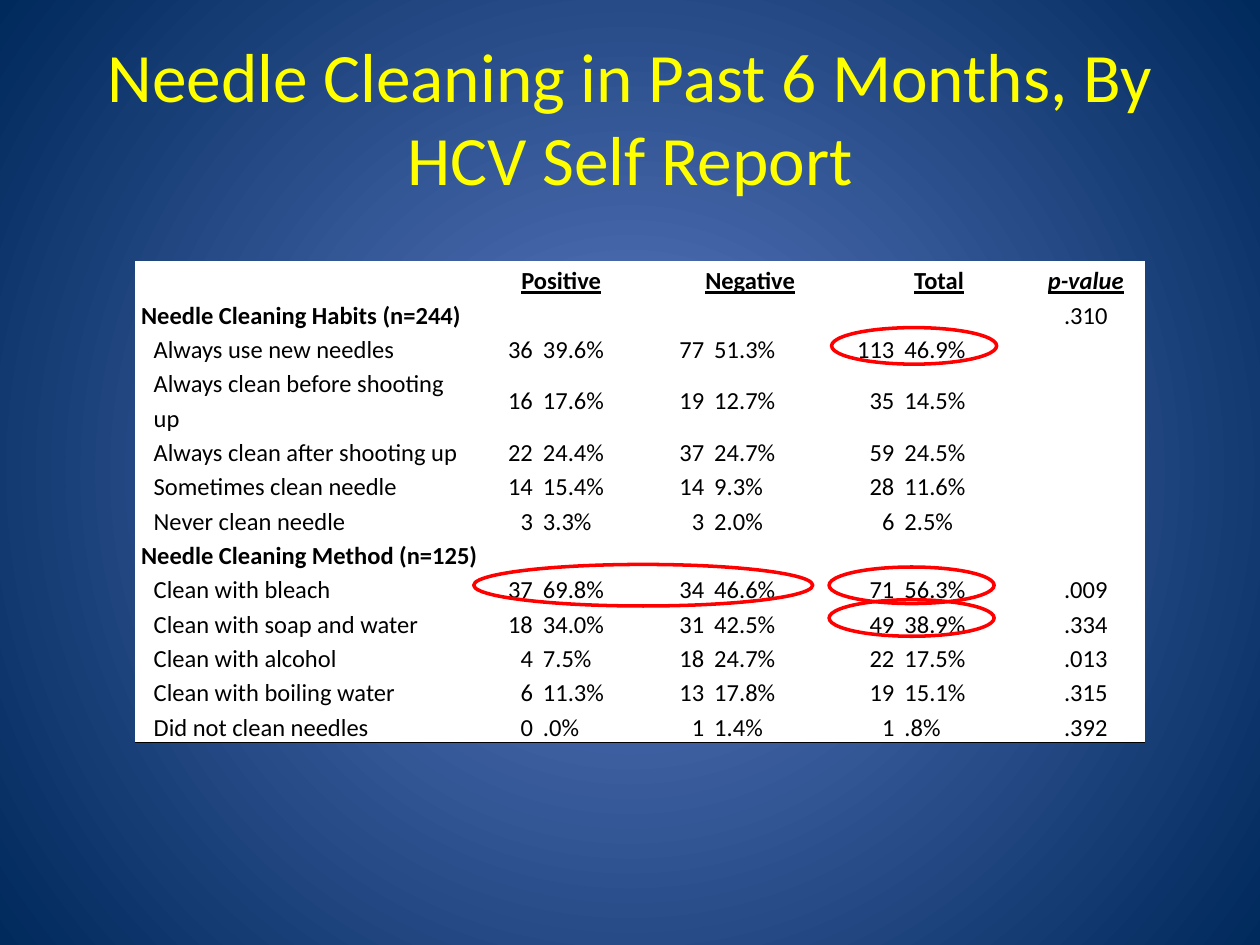
import lxml.etree
import pptx
import pptx.dml.color
import pptx.enum.shapes
import pptx.enum.text
import pptx.oxml.ns
import pptx.util

COLORS = {"title": "FFFF00", "text": "000000", "cell": "FFFFFF", "ring": "FF0000",
          "center": "5E7CC5", "edge": "00295C"}
FONT = "Calibri"
# The slide is a grid of 100 columns by 75 rows.
UNIT = pptx.util.Inches(0.1)
COLUMNS = (26.7, 5.2, 8.9, 4.7, 11.2, 3.9, 10.2, 9.2)
ROW = 2.7
TWO_LINE_ROW = 3
ALIGN = pptx.enum.text.PP_ALIGN
ANCHOR = pptx.enum.text.MSO_ANCHOR
qn = pptx.oxml.ns.qn

GROUPS = ("Positive", "Negative", "Total")
HABITS = "Needle Cleaning Habits (n=244)"
METHOD = "Needle Cleaning Method (n=125)"
ROWS = (
    (HABITS, "", "", "", "", "", "", ".310"),
    ("Always use new needles", "36", "39.6%", "77", "51.3%", "113", "46.9%", ""),
    ("Always clean before shooting up", "16", "17.6%", "19", "12.7%", "35", "14.5%", ""),
    ("Always clean after shooting up", "22", "24.4%", "37", "24.7%", "59", "24.5%", ""),
    ("Sometimes clean needle", "14", "15.4%", "14", "9.3%", "28", "11.6%", ""),
    ("Never clean needle", "3", "3.3%", "3", "2.0%", "6", "2.5%", ""),
    (METHOD, "", "", "", "", "", "", ""),
    ("Clean with bleach", "37", "69.8%", "34", "46.6%", "71", "56.3%", ".009"),
    ("Clean with soap and water", "18", "34.0%", "31", "42.5%", "49", "38.9%", ".334"),
    ("Clean with alcohol", "4", "7.5%", "18", "24.7%", "22", "17.5%", ".013"),
    ("Clean with boiling water", "6", "11.3%", "13", "17.8%", "19", "15.1%", ".315"),
    ("Did not clean needles", "0", ".0%", "1", "1.4%", "1", ".8%", ".392"),
)
RINGS = ((66, 26, 13.1, 2.9), (37.6, 44.8, 26.9, 3.3),
         (65.8, 45, 13.1, 2.9), (65.8, 47.6, 13.1, 2.9))


def rgb(name):
    return pptx.dml.color.RGBColor.from_string(COLORS[name])


def grid(*lengths):
    return [int(n * UNIT) for n in lengths]


def set_all(obj, values):
    for name, value in values.items():
        setattr(obj, name, value)


def add_run(p, text, size, color, **style):
    r = p.add_run()
    r.text = text
    set_all(r.font, dict(name=FONT, size=pptx.util.Pt(size), **style))
    r.font.color.rgb = rgb(color)


def set_background(s):
    """Radial gradient from the middle of the slide."""
    fill = s.background.fill
    fill.gradient()
    for stop, name in zip(fill.gradient_stops, ("center", "edge")):
        stop.color.rgb = rgb(name)
    grad = s.element.find(".//" + qn("a:gradFill"))
    lin = grad.find(qn("a:lin"))
    path = lxml.etree.Element(qn("a:path"), path="circle")
    lxml.etree.SubElement(path, qn("a:fillToRect"),
                          {side: "50000" for side in "ltrb"})
    grad.replace(lin, path)


def set_title(s, text):
    sp = s.shapes.title
    set_all(sp, dict(zip(("left", "top", "width", "height"), grid(5, 3, 90, 12.5))))
    tf = sp.text_frame
    set_all(tf, {"word_wrap": True, "vertical_anchor": ANCHOR.MIDDLE,
                 "auto_size": pptx.enum.text.MSO_AUTO_SIZE.NONE})
    p = tf.paragraphs[0]
    p.alignment = ALIGN.CENTER
    add_run(p, text, 39.6, "title")


def fill_cell(cell, text, align, anchor, indent=False, **style):
    left, right = grid(1.4, 0.5) if indent else grid(0.4, 0.4)
    set_all(cell, {"margin_left": left, "margin_right": right, "margin_top": 0,
                   "margin_bottom": 0, "vertical_anchor": anchor})
    cell.fill.solid()
    cell.fill.fore_color.rgb = rgb("cell")
    p = cell.text_frame.paragraphs[0]
    set_all(p, {"alignment": align, "line_spacing": 1.15})
    if text:
        add_run(p, text, 14, "text", **style)
    else:
        lxml.etree.SubElement(p._p, qn("a:endParaRPr"), sz="1000")


def add_bottom_border(cell):
    ln = lxml.etree.Element(qn("a:lnB"), w=str(pptx.util.Pt(1)))
    fill = lxml.etree.SubElement(ln, qn("a:solidFill"))
    lxml.etree.SubElement(fill, qn("a:srgbClr"), val=COLORS["text"])
    cell._tc.get_or_add_tcPr().insert(0, ln)


def fill_header(table):
    texts = [""] * len(COLUMNS)
    texts[1:7:2] = GROUPS
    texts[-1] = "p-value"
    for c, text in enumerate(texts):
        fill_cell(table.cell(0, c), text, ALIGN.CENTER, ANCHOR.BOTTOM, bold=True,
                  underline=True, italic=text == "p-value")
    for c in (1, 3, 5):
        table.cell(0, c).merge(table.cell(0, c + 1))


def fill_row(table, i, values):
    label, *numbers, p_value = values
    heading = label in (HABITS, METHOD)
    fill_cell(table.cell(i, 0), label, ALIGN.LEFT, ANCHOR.BOTTOM,
              indent=not heading, bold=heading)
    for c, text in enumerate(numbers, 1):
        align = ALIGN.RIGHT if c % 2 else ALIGN.LEFT
        fill_cell(table.cell(i, c), text, align, ANCHOR.MIDDLE)
    fill_cell(table.cell(i, 7), p_value, ALIGN.CENTER, ANCHOR.MIDDLE)
    if label == METHOD:
        for first, last in ((0, 2), (3, 4), (5, 6)):
            table.cell(i, first).merge(table.cell(i, last))


def add_results_table(s):
    count = len(ROWS) + 1
    box = grid(10.8, 20.8, sum(COLUMNS), ROW * (count + 1))
    table = s.shapes.add_table(count, len(COLUMNS), *box).table
    set_all(table, {"first_row": False, "horz_banding": False})
    for column, width in zip(table.columns, grid(*COLUMNS)):
        column.width = width
    for i, row in enumerate(table.rows):
        row.height = grid(ROW * (2 if i == TWO_LINE_ROW else 1))[0]
    fill_header(table)
    for i, values in enumerate(ROWS, 1):
        fill_row(table, i, values)
    for c in range(len(COLUMNS)):
        add_bottom_border(table.cell(count - 1, c))


def add_ring(s, box):
    sp = s.shapes.add_shape(pptx.enum.shapes.MSO_SHAPE.OVAL, *grid(*box))
    sp.shadow.inherit = False
    sp.fill.background()
    sp.line.color.rgb = rgb("ring")
    sp.line.width = pptx.util.Pt(2)


def main():
    prs = pptx.Presentation()
    prs.slide_width, prs.slide_height = grid(100, 75)
    s = prs.slides.add_slide(prs.slide_layouts.get_by_name("Title Only"))
    set_background(s)
    set_title(s, "Needle Cleaning in Past 6 Months, By HCV Self Report")
    add_results_table(s)
    for box in RINGS:
        add_ring(s, box)
    prs.save("out.pptx")


if __name__ == "__main__":
    main()
